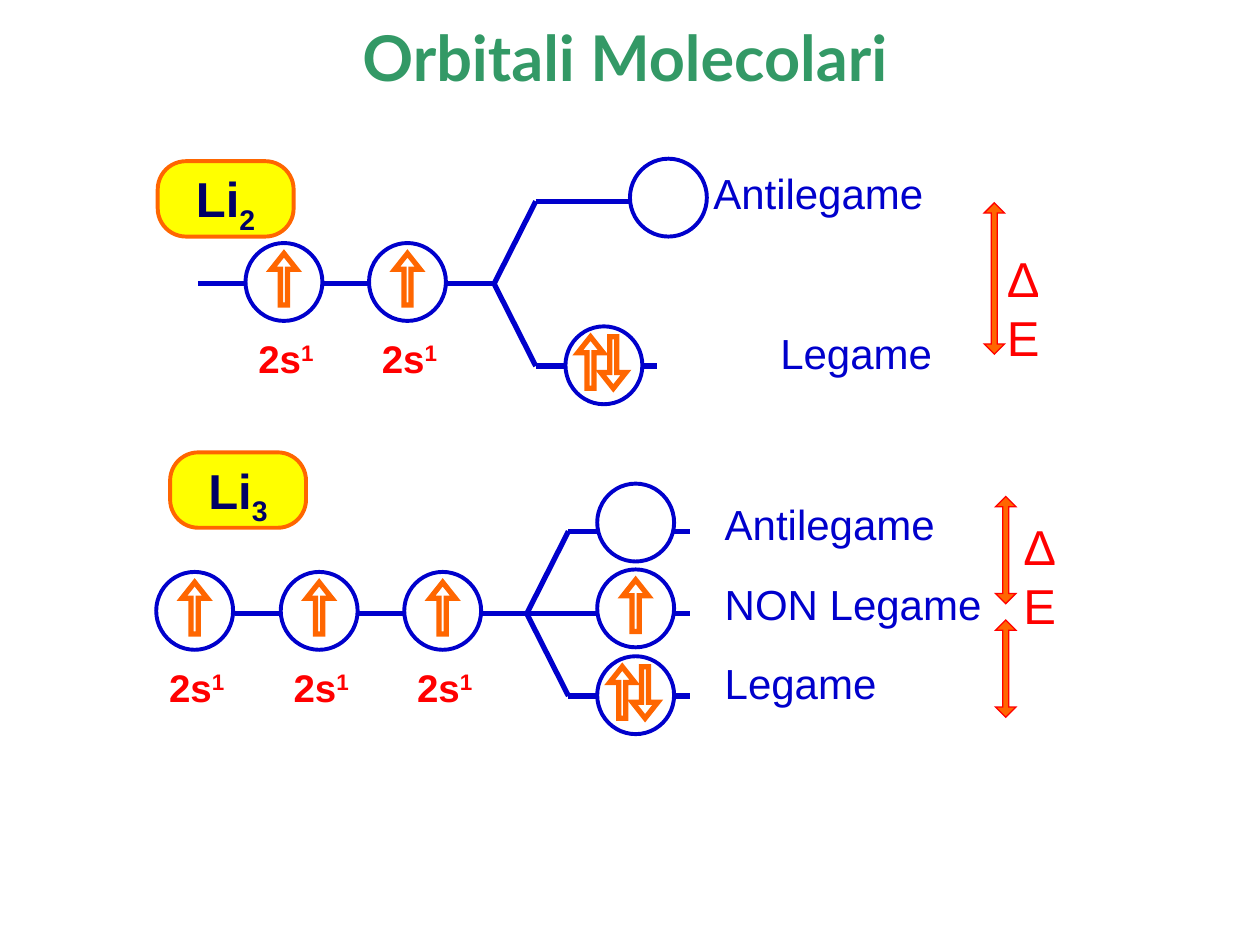
from lxml import etree
from pptx import Presentation
from pptx.dml.color import RGBColor
from pptx.enum.shapes import MSO_CONNECTOR, MSO_SHAPE
from pptx.enum.text import MSO_ANCHOR, PP_ALIGN
from pptx.oxml.ns import qn
from pptx.util import Cm, Pt

ELLIPSE, ROUNDED = MSO_SHAPE.OVAL, MSO_SHAPE.ROUNDED_RECTANGLE
UP, DOWN, UP_DOWN = MSO_SHAPE.UP_ARROW, MSO_SHAPE.DOWN_ARROW, MSO_SHAPE.UP_DOWN_ARROW
STRAIGHT = MSO_CONNECTOR.STRAIGHT
MIDDLE, CENTER, LEFT = MSO_ANCHOR.MIDDLE, PP_ALIGN.CENTER, PP_ALIGN.LEFT

GREEN = RGBColor(0x33, 0x99, 0x66)
BLUE = RGBColor(0x00, 0x00, 0xCC)
NAVY = RGBColor(0x00, 0x00, 0x66)
RED = RGBColor(0xFF, 0x00, 0x00)
ORANGE = RGBColor(0xFF, 0x66, 0x00)
YELLOW = RGBColor(0xFF, 0xFF, 0x00)
WHITE = RGBColor(0xFF, 0xFF, 0xFF)

# All lengths in cm
CIRCLE_W, CIRCLE_H = 1.55, 1.57
SPIN_W, SPIN_H = 0.51, 1.04
LINK = 0.95                  # line after each atomic orbital
RUN, RISE = 0.84, 1.66       # slanted lines from the junction
LEVEL = 2.45                 # length of a level line
SPINS = {0: [], 1: [(UP, 0.52)], 2: [(UP, 0.25), (DOWN, 0.71)]}

# levels: circle x, circle y, electrons, label, label x, label y, label width
# gaps: energy arrow x, y, height, head ratio
DIAGRAMS = [
    dict(atoms=[4.95, 7.44], y=4.9, axis=5.72, junction=9.96,
         badge=(3.18, 3.25, "2"), lead=[3.99], middle=False,
         levels=[(12.7, 3.2, 0, "Antilegame", 14.22, 3.3, 5),
                 (11.4, 6.58, 2, "Legame", 15.57, 6.53, 3.8)],
         gaps=[(19.84, 4.09, 3.05, 1.43)], delta=(20.14, 4.93)),
    dict(atoms=[3.15, 5.66, 8.15], y=11.53, axis=12.37, junction=10.62,
         badge=(3.43, 9.12, "3"), lead=[], middle=True,
         levels=[(12.04, 9.75, 0, "Antilegame", 14.45, 9.96, 5),
                 (12.04, 11.48, 1, "NON Legame", 14.45, 11.58, 6),
                 (12.04, 13.23, 2, "Legame", 14.45, 13.18, 3.8)],
         gaps=[(20.07, 10.01, 2.16, 1.01), (20.07, 12.5, 1.96, 0.92)],
         delta=(20.47, 10.34)),
]

prs = Presentation()
prs.slide_width, prs.slide_height = Cm(25.4), Cm(19.05)
s = prs.slides.add_slide(prs.slide_layouts[5])


def add_shape(kind, x, y, w, h, fill, line, weight, adjustments=()):
    """Add a shape with sharp line corners."""
    sp = s.shapes.add_shape(kind, Cm(x), Cm(y), Cm(w), Cm(h))
    sp.shadow.inherit = False
    if fill is None:
        sp.fill.background()
    else:
        sp.fill.solid()
        sp.fill.fore_color.rgb = fill
    sp.line.color.rgb = line
    sp.line.width = Pt(weight)
    etree.SubElement(sp._element.spPr.find(qn("a:ln")), qn("a:miter"), lim="800000")
    for i, value in enumerate(adjustments):
        sp.adjustments[i] = value
    return sp


def write(sp, text, size, color, bold=False, script="", baseline=0, align=LEFT, wrap=True):
    """Fill a shape with text, followed by an optional sub- or superscript."""
    tf = sp.text_frame
    tf.word_wrap = wrap
    tf.margin_left = tf.margin_right = Cm(0.16)
    tf.margin_top = tf.margin_bottom = Cm(0.08)
    p = tf.paragraphs[0]
    p.alignment = align
    for part, shift in ((text, 0), (script, baseline)):
        if part:
            r = p.add_run()
            r.text = part
            r.font.name, r.font.size, r.font.bold = "Arial", Pt(size), bold
            r.font.color.rgb = color
            if shift:
                r.font._element.set("baseline", str(shift * 1000))


title = s.shapes.title
title.left, title.top, title.width, title.height = Cm(4.5), Cm(0.25), Cm(16.2), Cm(1.78)
tf = title.text_frame
tf.text = "Orbitali Molecolari"
tf.word_wrap = False
tf.vertical_anchor = MIDDLE
p = tf.paragraphs[0]
p.alignment = CENTER
r = p.runs[0]
r.font.name, r.font.size, r.font.bold = "Lato", Pt(36), True
r.font.color.rgb = GREEN

for d in DIAGRAMS:
    x, y, count = d["badge"]
    badge = add_shape(ROUNDED, x, y, 2.74, 1.52, YELLOW, ORANGE, 2.25, [0.375])
    write(badge, "Li", 28, NAVY, True, count, -25, CENTER)
    badge.text_frame.vertical_anchor = MIDDLE
    badge.text_frame.margin_top = Cm(0.22)

    # Axis, slanted lines and level lines
    axis, junction = d["axis"], d["junction"]
    start = junction + RUN
    lines = [(x, axis, x + LINK, axis)
             for x in d["lead"] + [x + 1.58 for x in d["atoms"]]]
    for level_y in (axis - RISE, axis + RISE):
        lines.append((junction, axis, start, level_y))
        lines.append((start, level_y, start + LEVEL, level_y))
    if d["middle"]:
        lines.append((junction, axis, start + LEVEL, axis))
    for ends in lines:
        c = s.shapes.add_connector(STRAIGHT, *[Cm(v) for v in ends])
        c.line.color.rgb = BLUE
        c.line.width = Pt(3)
        etree.SubElement(c._element.spPr, qn("a:effectLst"))

    # Orbitals with their electrons
    orbitals = [(x, d["y"], 1, None) for x in d["atoms"]]
    orbitals += [(*level[:3], WHITE) for level in d["levels"]]
    for x, y, electrons, fill in orbitals:
        add_shape(ELLIPSE, x, y, CIRCLE_W, CIRCLE_H, fill, BLUE, 2.25)
        for kind, dx in SPINS[electrons]:
            add_shape(kind, x + dx, y + 0.21, SPIN_W, SPIN_H, fill, ORANGE, 3, [0.28, 0.63])

    for x in d["atoms"]:
        tb = s.shapes.add_textbox(Cm(x + 0.1), Cm(d["y"] + 1.77), Cm(1.45), Cm(1.09))
        write(tb, "2s", 22, RED, True, "1", 30, wrap=False)
    for *_, label, x, y, w in d["levels"]:
        tb = s.shapes.add_textbox(Cm(x), Cm(y), Cm(w), Cm(1.17))
        write(tb, label, 24, BLUE)

    # Energy gap: this preset lists its head ratio before its shaft ratio
    for x, y, h, head in d["gaps"]:
        add_shape(UP_DOWN, x, y, 0.41, h, ORANGE, RED, 0.75, [head, 0.29])
    x, y = d["delta"]
    tb = s.shapes.add_textbox(Cm(x), Cm(y), Cm(1.55), Cm(1.35))
    write(tb, "ΔE", 28, RED)

prs.save("out.pptx")
